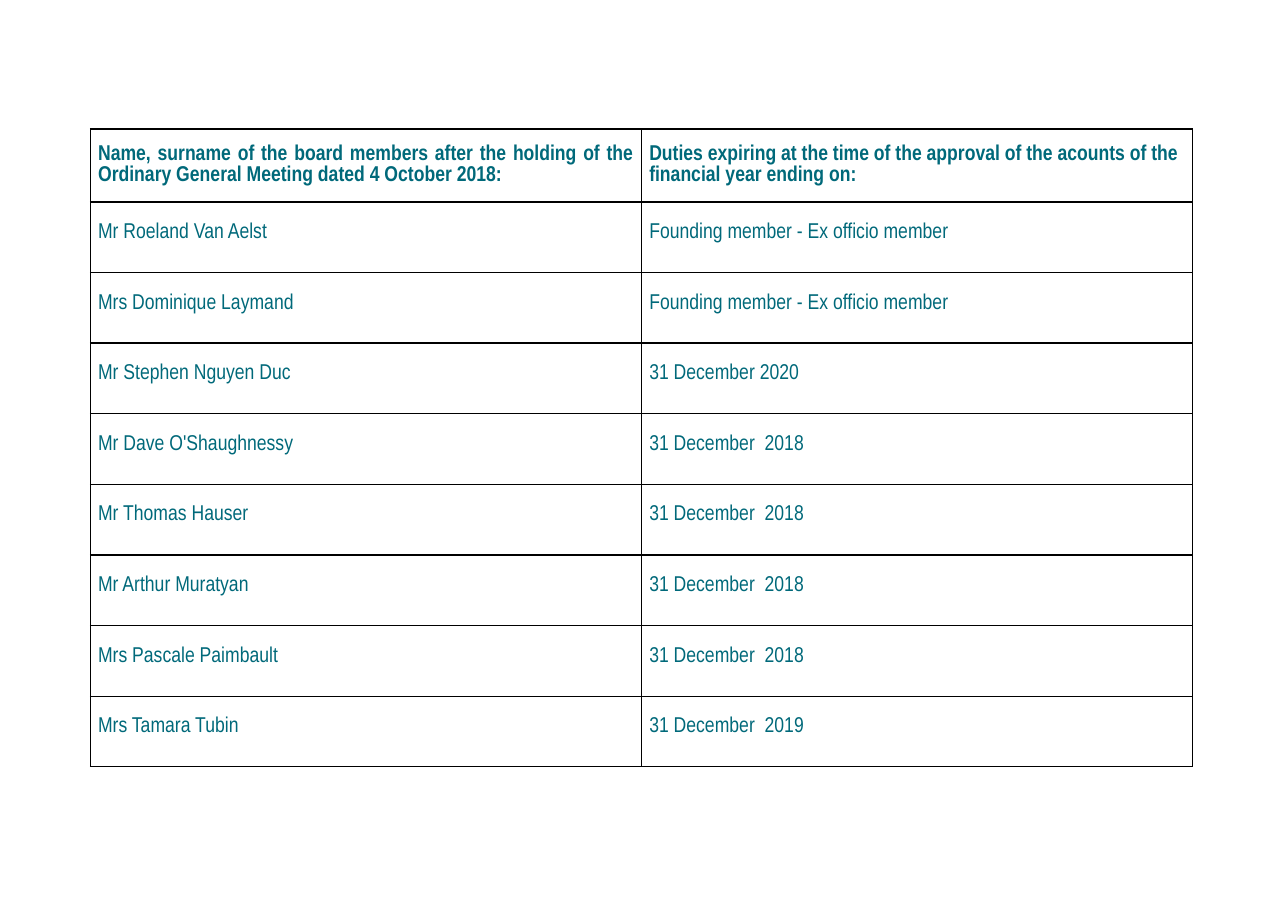
from lxml.etree import SubElement
from pptx import Presentation
from pptx.dml.color import RGBColor
from pptx.enum.text import MSO_ANCHOR, PP_ALIGN
from pptx.oxml.ns import qn
from pptx.util import Pt

HEADER = (
    "Name, surname of the board members after the holding of the Ordinary General Meeting dated 4 October 2018:",
    "Duties expiring at the time of the approval of the acounts of the financial year ending on:",
)
MEMBERS = [
    ("Mr Roeland Van Aelst", "Founding member - Ex officio member"),
    ("Mrs Dominique Laymand", "Founding member - Ex officio member"),
    ("Mr Stephen Nguyen Duc", "31 December 2020"),
    ("Mr Dave O'Shaughnessy", "31 December  2018"),
    ("Mr Thomas Hauser", "31 December  2018"),
    ("Mr Arthur Muratyan", "31 December  2018"),
    ("Mrs Pascale Paimbault", "31 December  2018"),
    ("Mrs Tamara Tubin", "31 December  2019"),
]
TEAL = RGBColor(0x00, 0x69, 0x7A)
BLACK = RGBColor(0, 0, 0)
LEFT, TOP = 59.1, 84.4
COL_W, HEADER_H, ROW_H = 360.2, 47.6, 46.15
INSET, LINE_H = 5, 13.7


def add_borders(cell):
    tc_pr = cell._tc.get_or_add_tcPr()
    for side in ("lnL", "lnR", "lnT", "lnB"):
        ln = SubElement(tc_pr, qn(f"a:{side}"), w=str(Pt(1)))
        fill = SubElement(ln, qn("a:solidFill"))
        SubElement(fill, qn("a:srgbClr"), val=str(BLACK))


def fill_cell(cell, text, is_header, justified):
    add_borders(cell)
    cell.fill.background()
    cell.margin_left = cell.margin_right = Pt(INSET)
    cell.margin_top = Pt(0 if is_header else LINE_H)
    cell.margin_bottom = Pt(0)
    cell.vertical_anchor = MSO_ANCHOR.MIDDLE if is_header else MSO_ANCHOR.TOP
    p = cell.text_frame.paragraphs[0]
    p.text = text
    p.alignment = PP_ALIGN.JUSTIFY if justified else PP_ALIGN.LEFT
    p.space_after = Pt(12)
    p.font.name = "Arial Narrow"
    p.font.size = Pt(14)
    p.font.bold = is_header
    p.font.color.rgb = TEAL


prs = Presentation()
prs.slide_width, prs.slide_height = Pt(841.68), Pt(595.44)
s = prs.slides.add_slide(prs.slide_layouts[6])

rows = [HEADER] + MEMBERS
height = HEADER_H + ROW_H * len(MEMBERS)
table = s.shapes.add_table(
    len(rows), len(HEADER), Pt(LEFT), Pt(TOP), Pt(COL_W * len(HEADER)), Pt(height)
).table
table.first_row = table.horz_banding = False
for col in table.columns:
    col.width = Pt(COL_W)
for r, texts in enumerate(rows):
    is_header = r == 0
    table.rows[r].height = Pt(HEADER_H if is_header else ROW_H)
    for c, text in enumerate(texts):
        fill_cell(table.cell(r, c), text, is_header, not is_header or c == 0)

prs.save("out.pptx")
